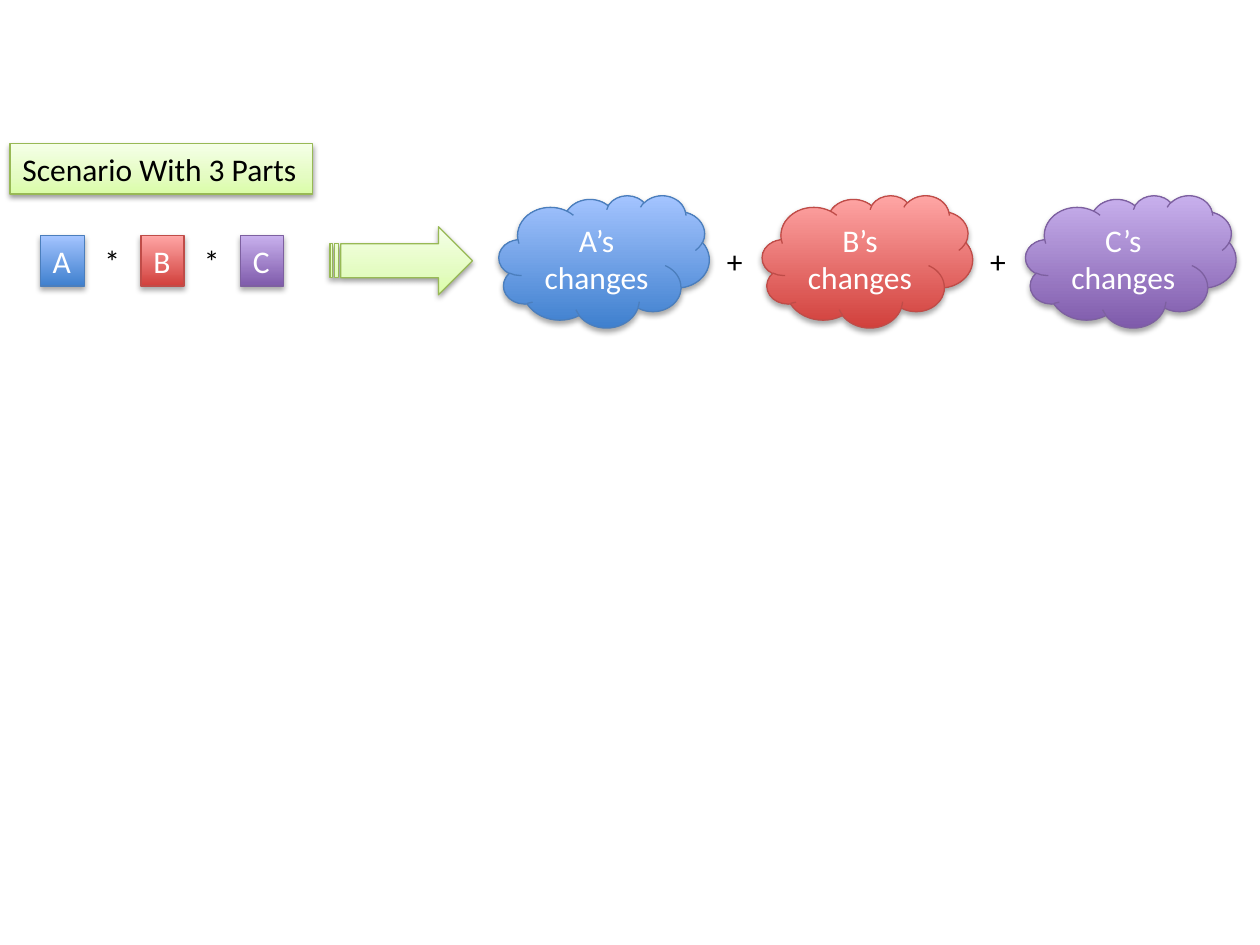
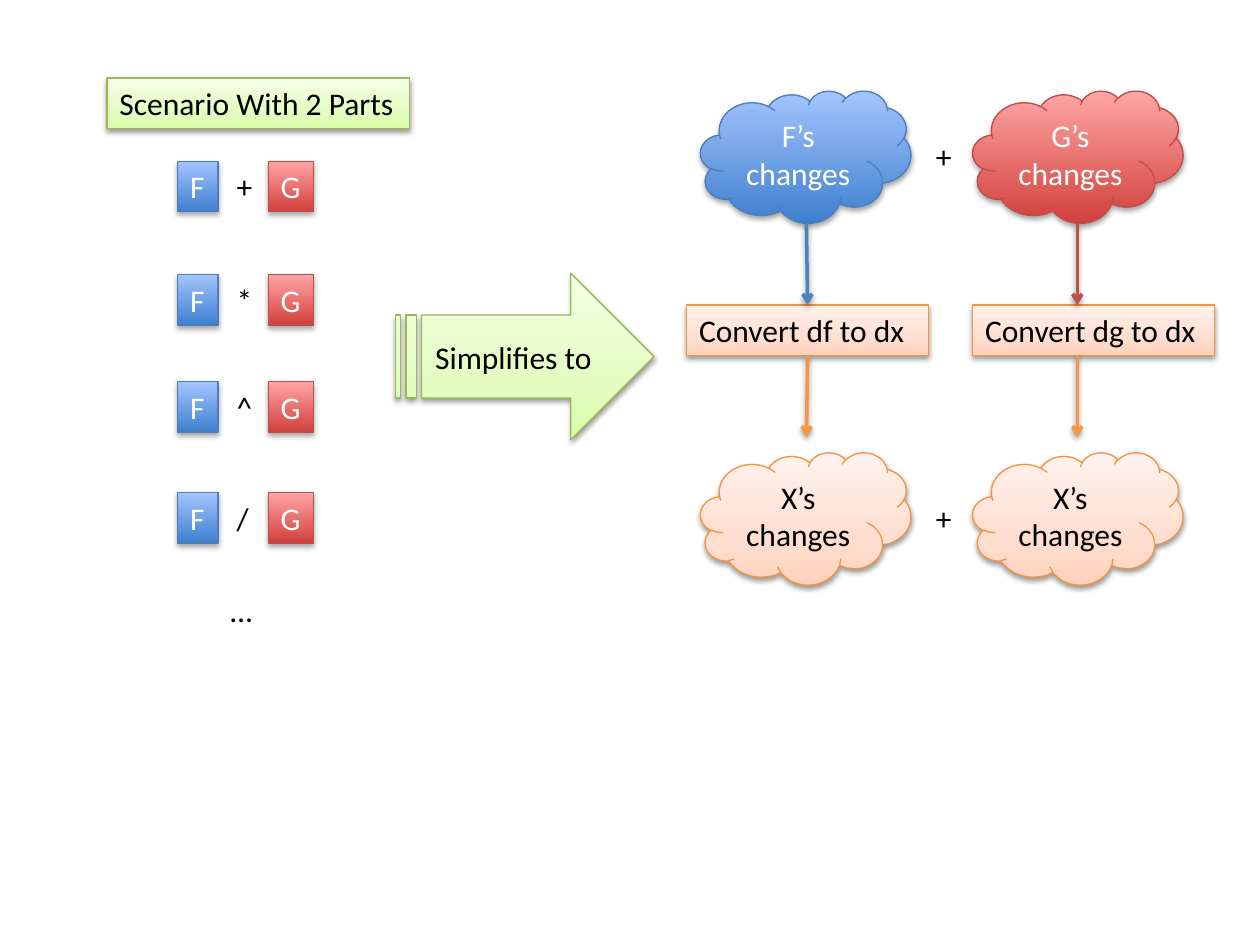
from lxml import etree
from pptx import Presentation
from pptx.dml.color import RGBColor
from pptx.enum.shapes import MSO_CONNECTOR, MSO_SHAPE
from pptx.enum.text import MSO_ANCHOR, MSO_AUTO_SIZE, PP_ALIGN
from pptx.oxml import parse_xml
from pptx.oxml.ns import nsdecls, qn
from pptx.util import Pt

RECT, CLOUD, STRIPED = MSO_SHAPE.RECTANGLE, MSO_SHAPE.CLOUD, MSO_SHAPE.STRIPED_RIGHT_ARROW
STRAIGHT = MSO_CONNECTOR.STRAIGHT
PX = 9144
FONT = {"name": "Calibri", "size": Pt(18)}
LABEL = {"word_wrap": False, "vertical_anchor": MSO_ANCHOR.TOP,
         "auto_size": MSO_AUTO_SIZE.SHAPE_TO_FIT_TEXT}
CENTRED = {"word_wrap": True, "vertical_anchor": MSO_ANCHOR.MIDDLE,
           "auto_size": MSO_AUTO_SIZE.NONE}
BLACK, WHITE = "000000", "FFFFFF"
STRONG_SHADOW, SOFT_SHADOW = (35, 23000), (38, 20000)

TONES = {
    "blue": dict(stops=[(0, "3F80CE"), (100, "A4C4FF")], edge="4B7EBC", ink=WHITE, shadow=STRONG_SHADOW),
    "red": dict(stops=[(0, "D1403C"), (100, "FFA6A5")], edge="BF4C48", ink=WHITE, shadow=STRONG_SHADOW),
    "purple": dict(stops=[(0, "7F5BAB"), (100, "C8B0ED")], edge="7D60A0", ink=WHITE, shadow=STRONG_SHADOW),
    "green": dict(stops=[(0, "DAFDA7"), (35, "E4FCC2"), (100, "F5FFE7")], edge="98B955", ink=BLACK,
                  shadow=SOFT_SHADOW),
    "orange": dict(stops=[(0, "FFD2BD"), (35, "FFDED0"), (100, "FFF2ED")], edge="F69240", ink=BLACK,
                   shadow=SOFT_SHADOW),
}

LINE_H, SIGN_W, HEADING_W = 40, 33, 240
CLOUD_W, CLOUD_H = 167, 105

THREE_PARTS = [("A", 35, "blue"), ("*", SIGN_W, None), ("B", 34, "red"),
               ("*", SIGN_W, None), ("C", 34, "purple")]
THREE_CHANGES = [("A’s changes", "blue"), ("B’s changes", "red"), ("C’s changes", "purple")]

TWO_PART_ROWS = [("+", 128), ("*", 218), ("^", 303), ("/", 391)]
TWO_CHANGES = [("F’s changes", "blue"), ("G’s changes", "red")]
X_CHANGES = [("X’s changes", "orange")] * 2
CONVERSIONS = [("Convert df to dx", 545, 640, "4F81BD"), ("Convert dg to dx", 772, 855, "C0504D")]
CONVERT_W, CONVERT_TOP, CONVERT_COLOR = 192, 242, "F79646"


def rgb(color):
    return RGBColor.from_string(color)


def px(*lengths):
    return [length * PX for length in lengths]


def apply(target, values):
    for name, value in values.items():
        setattr(target, name, value)


def add_shadow(part, strength, distance):
    part._element.spPr.append(parse_xml(
        f'<a:effectLst {nsdecls("a")}><a:outerShdw blurRad="40000" dist="{distance}" dir="5400000" '
        f'rotWithShape="0"><a:srgbClr val="{BLACK}"><a:alpha val="{strength * 1000}"/></a:srgbClr>'
        '</a:outerShdw></a:effectLst>'))


def write(part, text, ink, frame_format, align):
    apply(part.text_frame, frame_format)
    paragraph = part.text_frame.paragraphs[0]
    paragraph.alignment = align
    run = paragraph.add_run()
    run.text = text
    apply(run.font, FONT)
    run.font.color.rgb = rgb(ink)


def paint(part, tone):
    part.fill.gradient()
    properties = part._element.spPr
    stops = "".join(f'<a:gs pos="{at * 1000}"><a:srgbClr val="{color}"/></a:gs>'
                    for at, color in tone["stops"])
    properties.replace(properties.find(qn("a:gradFill")), parse_xml(
        f'<a:gradFill {nsdecls("a")} rotWithShape="1"><a:gsLst>{stops}</a:gsLst>'
        '<a:lin ang="16200000" scaled="0"/></a:gradFill>'))
    part.line.color.rgb = rgb(tone["edge"])
    part.line.width = Pt(0.75)
    add_shadow(part, *tone["shadow"])


def add_block(shapes, preset, box, tone_name, text=""):
    tone = TONES[tone_name]
    block = shapes.add_shape(preset, *px(*box))
    paint(block, tone)
    if text:
        is_label = preset == RECT
        write(block, text, tone["ink"], LABEL if is_label else CENTRED,
              PP_ALIGN.LEFT if is_label else PP_ALIGN.CENTER)
    return block


def add_sign(shapes, sign, left, top, width=SIGN_W):
    write(shapes.add_textbox(*px(left, top, width, LINE_H)), sign, BLACK, LABEL, PP_ALIGN.LEFT)


def add_cloud_row(shapes, changes, left, top, pitch, sign_offset):
    for index, (text, tone) in enumerate(changes):
        cloud_left = left + index * pitch
        add_block(shapes, CLOUD, (cloud_left, top, CLOUD_W, CLOUD_H), tone, text)
        if index:
            add_sign(shapes, "+", cloud_left - pitch + sign_offset, top + 32)


def add_arrow(shapes, x, top, bottom, color):
    arrow = shapes.add_connector(STRAIGHT, *px(x, top, x, bottom))
    arrow.line.color.rgb = rgb(color)
    arrow.line.width = Pt(2)
    etree.SubElement(arrow.line._get_or_add_ln(), qn("a:tailEnd"), type="arrow")
    add_shadow(arrow, *SOFT_SHADOW)
    return arrow


def build_three_parts(slide):
    add_block(slide.shapes, RECT, (8, 114, HEADING_W, LINE_H), "green", "Scenario With 3 Parts")
    product = slide.shapes.add_group_shape().shapes
    left, top, gap = 32, 187, 6
    for text, width, tone in THREE_PARTS:
        if tone:
            add_block(product, RECT, (left, top, width, LINE_H), tone, text)
        else:
            add_sign(product, text, left, top)
        left += width + gap
    add_cloud_row(slide.shapes.add_group_shape().shapes, THREE_CHANGES, 396, 155, 209, 171)
    add_block(slide.shapes, STRIPED, (262, 180, 113, 54), "green")


def build_two_parts(slide):
    add_block(slide.shapes, STRIPED, (314, 217, 205, 132), "green", "Simplifies to ")

    scenario = slide.shapes.add_group_shape().shapes
    add_block(scenario, RECT, (85, 62, HEADING_W, LINE_H), "green", "Scenario With 2 Parts")
    for sign, top in TWO_PART_ROWS:
        add_block(scenario, RECT, (141, top, 32, LINE_H), "blue", "F")
        add_block(scenario, RECT, (213, top, 36, LINE_H), "red", "G")
        add_sign(scenario, sign, 178, top)
    add_sign(scenario, "…", 173, 464, 38)

    flow = slide.shapes.add_group_shape().shapes
    cloud_top = 72
    add_cloud_row(flow, TWO_CHANGES, 556, cloud_top, 216, 177)
    add_cloud_row(flow, X_CHANGES, 556, 359, 216, 177)
    convert_bottom = CONVERT_TOP + LINE_H
    for text, left, arrow_x, color in CONVERSIONS:
        conversion = add_block(flow, RECT, (left, CONVERT_TOP, CONVERT_W, LINE_H), "orange", text)
        incoming = add_arrow(flow, arrow_x, cloud_top + CLOUD_H, CONVERT_TOP, color)
        outgoing = add_arrow(flow, arrow_x, convert_bottom, 347, CONVERT_COLOR)
        if abs(left + CONVERT_W // 2 - arrow_x) <= 1:
            incoming.end_connect(conversion, 0)
            outgoing.begin_connect(conversion, 2)


def main():
    deck = Presentation()
    deck.slide_width, deck.slide_height = px(1000, 750)
    blank = deck.slide_layouts[6]
    for build in (build_three_parts, build_two_parts):
        build(deck.slides.add_slide(blank))
    deck.save("out.pptx")


if __name__ == "__main__":
    main()
